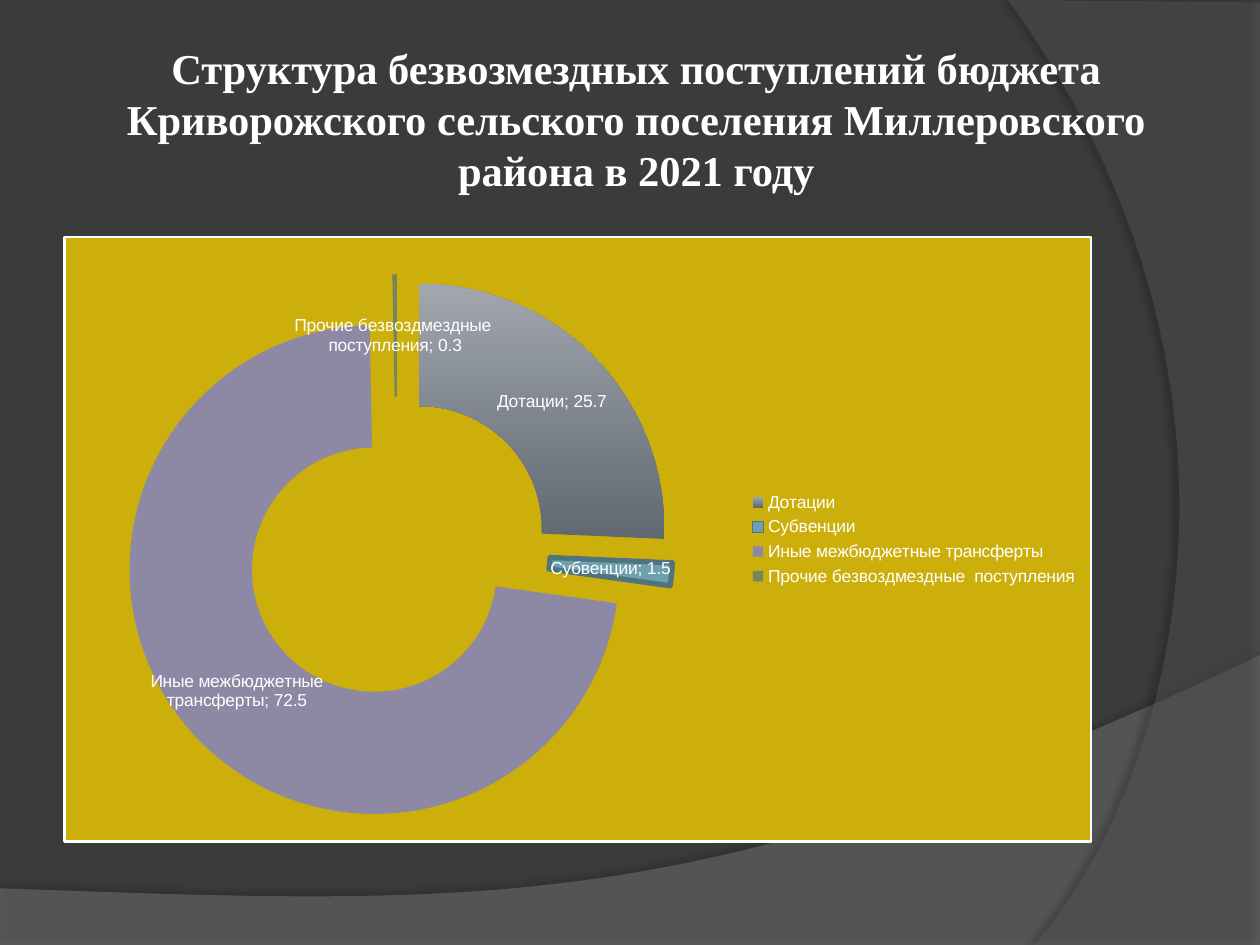
"""Build a slide with a doughnut chart of budget grants over a dark wave backdrop."""
from lxml import etree
from pptx import Presentation
from pptx.chart.data import CategoryChartData
from pptx.dml.color import RGBColor
from pptx.enum.chart import XL_CHART_TYPE, XL_LEGEND_POSITION
from pptx.enum.text import MSO_ANCHOR, PP_ALIGN
from pptx.oxml import parse_xml
from pptx.oxml.ns import nsdecls, qn
from pptx.util import Inches, Pt

RING = XL_CHART_TYPE.DOUGHNUT_EXPLODED
RIGHT = XL_LEGEND_POSITION.RIGHT
MIDDLE = MSO_ANCHOR.MIDDLE
CENTER = PP_ALIGN.CENTER

HEAD = ("Структура безвозмездных поступлений бюджета Криворожского "
        "сельского поселения Миллеровского района в 2021 году")
GRANTS = [
    ("Дотации", 25.7, "gray"),
    ("Субвенции", 1.5, "teal"),
    ("Иные межбюджетные трансферты", 72.5, "mauve"),
    ("Прочие безвоздмездные  поступления", 0.3, "green"),
]
COLORS = {
    "back": "3B3B3B", "white": "FFFFFF", "gold": "CCAF0A",
    "low": "7F7F7F", "side": "5E5E5E", "gray": "606872", "pale": "A1A6AF",
    "teal": "6EA0B0", "edge": "4F7480", "mauve": "8D89A4", "green": "748560",
}
WAVES = [
    {"start": (0, 7.05), "lines": [(0, 7.51), (10, 7.51), (10, 5.2)],
     "curve": [(5.59, 7.29), (3.91, 7.19), (0, 7.05)],
     "fill": "low", "alpha": 45, "shade": 35, "dist": 3.5, "turn": 270},
    {"start": (10, 0.02), "lines": [(10, 7.5), (8.21, 7.5)],
     "curve": [(9.35, 6.19), (10.18, 3), (8, 0)],
     "fill": "side", "alpha": 40, "shade": 45, "dist": 4, "turn": 180},
]
STEPS = 60


def tint(name):
    return RGBColor.from_string(COLORS[name])


def bend(start, ends):
    """Return points along a cubic curve."""
    pts = []
    for i in range(1, STEPS + 1):
        t = i / STEPS
        parts = ((1 - t) ** 3, 3 * t * (1 - t) ** 2, 3 * t * t * (1 - t), t ** 3)
        pts.append(tuple(sum(w * p[k] for w, p in zip(parts, [start, *ends]))
                         for k in (0, 1)))
    return pts


def add_wave(slide, wave):
    """Draw one translucent backdrop shape with a soft shadow."""
    pts = wave["lines"] + bend(wave["lines"][-1], wave["curve"])
    pen = slide.shapes.build_freeform(*map(Inches, wave["start"]))
    pen.add_line_segments([(Inches(x), Inches(y)) for x, y in pts])
    shape = pen.convert_to_shape()
    shape.fill.solid()
    shape.fill.fore_color.rgb = tint(wave["fill"])
    shape.line.fill.background()
    props = shape._element.spPr
    color = props.find(qn("a:solidFill"))[0]
    etree.SubElement(color, qn("a:alpha"), val=str(wave["alpha"] * 1000))
    props.append(parse_xml(
        f'<a:effectLst {nsdecls("a")}><a:outerShdw blurRad="{Pt(4)}" '
        f'dist="{Pt(wave["dist"])}" dir="{wave["turn"] * 60000}">'
        f'<a:srgbClr val="000000"><a:alpha val="{wave["shade"] * 1000}"/>'
        '</a:srgbClr></a:outerShdw></a:effectLst>'))


def add_head(slide):
    """Fill the title placeholder and bring it above the waves."""
    title = slide.shapes.title
    slide.shapes._spTree.append(title._element)
    title.left, title.top = Inches(0.55), Inches(0.47)
    title.width, title.height = Inches(9), Inches(1.88)
    frame = title.text_frame
    frame.word_wrap = True
    frame.vertical_anchor = MIDDLE
    frame.margin_left = frame.margin_right = frame.margin_top = Inches(0.05)
    frame.margin_bottom = Inches(0.99)
    para = frame.paragraphs[0]
    para.alignment = CENTER
    run = para.add_run()
    run.text = HEAD
    font = run.font
    font.name, font.size, font.bold = "Times New Roman", Pt(24.3), True
    font.color.rgb = tint("white")


def add_ring(slide):
    """Add the doughnut chart with its legend and labels."""
    data = CategoryChartData()
    data.categories = [name for name, _, _ in GRANTS]
    data.add_series("Series 1", [value for _, value, _ in GRANTS])
    chart = slide.shapes.add_chart(
        RING, Inches(0.5), Inches(1.87), Inches(8.17), Inches(4.82), data).chart
    chart.has_title = False
    chart.font.name, chart.font.size = "Arial", Pt(10)
    chart.font.color.rgb = tint("white")
    chart.has_legend = True
    chart.legend.position = RIGHT
    chart.legend.include_in_layout = False
    chart._chartSpace.find(qn("c:txPr")).addprevious(parse_xml(
        f'<c:spPr {nsdecls("c", "a")}><a:solidFill><a:srgbClr val="{COLORS["gold"]}"/>'
        f'</a:solidFill><a:ln w="{Pt(1.5)}"><a:solidFill>'
        f'<a:srgbClr val="{COLORS["white"]}"/></a:solidFill></a:ln></c:spPr>'))
    plot = chart.plots[0]
    plot.vary_by_categories = True
    plot.has_data_labels = True
    labels = plot.data_labels
    labels.show_value = labels.show_category_name = True
    labels.show_percentage = False
    labels.font.name, labels.font.size = "Arial", Pt(10)
    labels.font.color.rgb = tint("white")
    labels._element.find(qn("c:showBubbleSize")).addnext(
        parse_xml(f'<c:separator {nsdecls("c")}>; </c:separator>'))
    points = plot.series[0].points
    for i, (_, _, color) in enumerate(GRANTS):
        look = points[i].format
        look.fill.solid()
        look.fill.fore_color.rgb = tint(color)
        look.line.fill.background()
    fill = points[0].format.fill
    fill.gradient()
    fill.gradient_angle = 90
    for stop, color in zip(fill.gradient_stops, ("gray", "pale")):
        stop.color.rgb = tint(color)
    line = points[1].format.line
    line.color.rgb = tint("edge")
    line.width = Pt(3)


def main():
    deck = Presentation()
    deck.slide_width, deck.slide_height = Inches(10), Inches(7.5)
    slide = deck.slides.add_slide(deck.slide_layouts[5])
    back = slide.background.fill
    back.solid()
    back.fore_color.rgb = tint("back")
    for wave in WAVES:
        add_wave(slide, wave)
    add_head(slide)
    add_ring(slide)
    deck.save("out.pptx")


if __name__ == "__main__":
    main()
